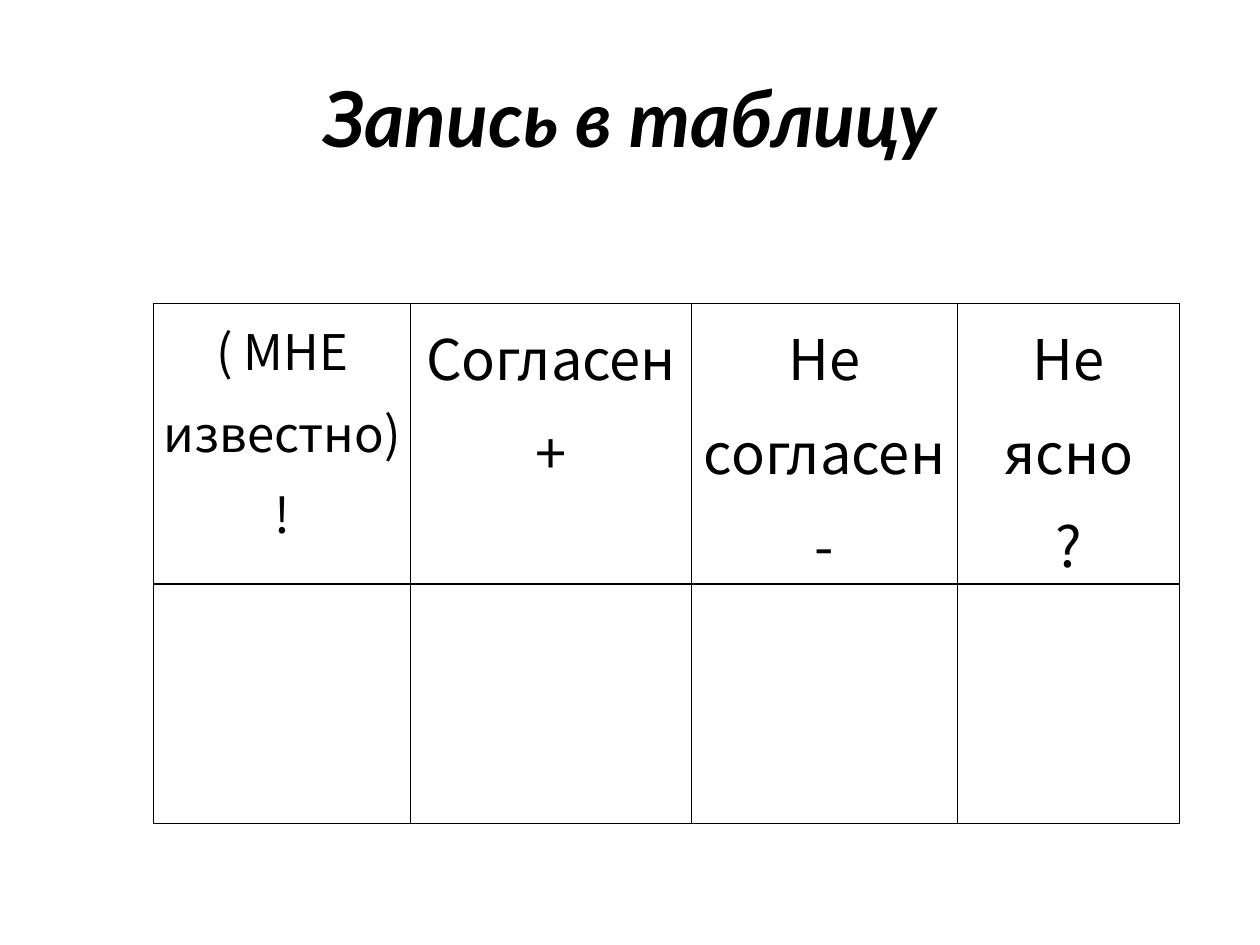
from lxml import etree
from pptx import Presentation
from pptx.dml.color import RGBColor
from pptx.enum.text import MSO_ANCHOR, PP_ALIGN
from pptx.oxml.ns import qn
from pptx.util import Inches, Pt

BLACK = RGBColor(0, 0, 0)
WHITE = RGBColor(255, 255, 255)
CENTER = PP_ALIGN.CENTER
MIDDLE = MSO_ANCHOR.MIDDLE
TITLE_FONT = "Lato"
TABLE_FONT = "Noto Sans CJK JP"
TITLE_ONLY = 5

TITLE_BOX = (0.5, 0.3, 9, 1.25)
TABLE_BOX = (1.22, 2.41, 8.14, 3.32)
COLUMN_WIDTHS = (2.04, 2.23, 2.11, 1.76)
ROW_HEIGHTS = (1.42, 1.9)
HEADINGS = (
    ("( МНЕ известно)", "!", 28),
    ("Согласен", "+", 32),
    ("Не согласен", "-", 32),
    ("Не ясно", "?", 32),
)


def format_paragraph(paragraph, font_name, size):
    """Centre a paragraph and set its black font."""
    paragraph.alignment = CENTER
    for run in paragraph.runs:
        run.font.name = font_name
        run.font.size = Pt(size)
        run.font.color.rgb = BLACK


def format_cell(cell):
    """Give a cell thin black borders, narrow margins and no fill."""
    properties = cell._tc.get_or_add_tcPr()
    for side in ("a:lnL", "a:lnR", "a:lnT", "a:lnB"):
        line = etree.SubElement(properties, qn(side), w=str(Pt(1)))
        fill = etree.SubElement(line, qn("a:solidFill"))
        etree.SubElement(fill, qn("a:srgbClr"), val=str(BLACK))
    cell.fill.background()
    cell.margin_left = cell.margin_right = Inches(0.07)
    cell.margin_top = cell.margin_bottom = 0


def place_title(slide, box):
    """Place the slide title in the given box."""
    title = slide.shapes.title
    title.left, title.top, title.width, title.height = map(Inches, box)
    title.text_frame.text = "Запись в таблицу"
    title.text_frame.vertical_anchor = MIDDLE
    paragraph = title.text_frame.paragraphs[0]
    format_paragraph(paragraph, TITLE_FONT, 44)
    paragraph.runs[0].font.bold = True
    paragraph.runs[0].font.italic = True


def place_answer_table(slide, box):
    """Place the answer table with its headings and an empty row."""
    table = slide.shapes.add_table(
        len(ROW_HEIGHTS), len(COLUMN_WIDTHS), *map(Inches, box)
    ).table
    table.first_row = False
    table.horz_banding = False
    for column, width in zip(table.columns, COLUMN_WIDTHS):
        column.width = Inches(width)
    for row, height in zip(table.rows, ROW_HEIGHTS):
        row.height = Inches(height)
    for cell in table.iter_cells():
        format_cell(cell)
    for cell, (label, mark, size) in zip(table.rows[0].cells, HEADINGS):
        cell.text_frame.text = f"{label}\n{mark}"
        for paragraph in cell.text_frame.paragraphs:
            paragraph.line_spacing = 1.15
            format_paragraph(paragraph, TABLE_FONT, size)


def main():
    """Build and save the presentation."""
    presentation = Presentation()
    presentation.slide_width = Inches(10)
    presentation.slide_height = Inches(7.5)
    slide = presentation.slides.add_slide(presentation.slide_layouts[TITLE_ONLY])
    slide.background.fill.solid()
    slide.background.fill.fore_color.rgb = WHITE
    place_title(slide, TITLE_BOX)
    place_answer_table(slide, TABLE_BOX)
    presentation.save("out.pptx")


if __name__ == "__main__":
    main()
